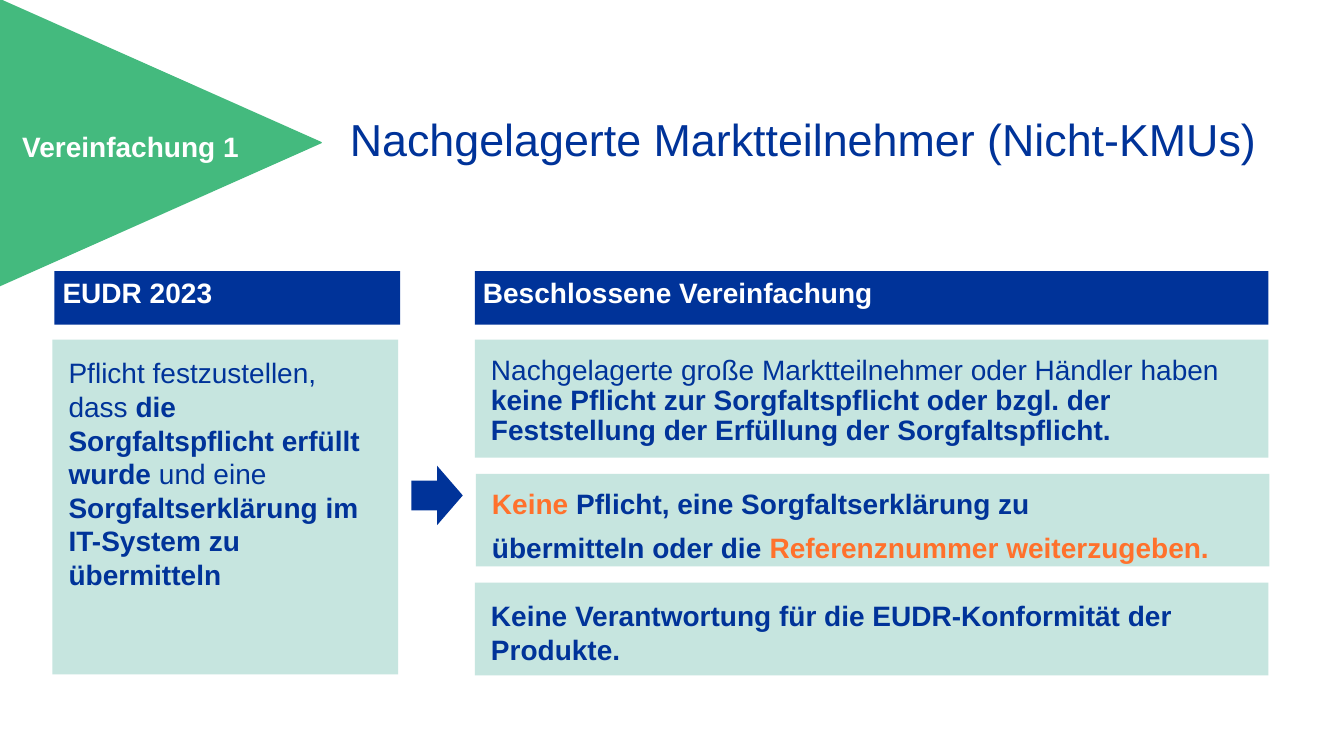
from dataclasses import dataclass
from lxml.etree import SubElement
from pptx import Presentation
from pptx.dml.color import RGBColor
from pptx.enum.shapes import MSO_SHAPE as Kind
from pptx.enum.text import MSO_ANCHOR as Anchor, MSO_AUTO_SIZE as Fit, PP_ALIGN as Align
from pptx.oxml.ns import qn
from pptx.util import Emu, Pt

PX = 9144  # 100 px to the inch
HUES = {"blue": "003399", "mint": "C6E5DF", "green": "44BA7E",
        "orange": "FF712C", "white": "FFFFFF"}


@dataclass(frozen=True)
class Run:
    text: str
    hue: str = "blue"
    bold: bool = False


@dataclass(frozen=True)
class Card:
    box: tuple[int, int, int, int]
    fill: str
    pad: int
    lines: list[list[Run]]
    pitch: float = 0.9
    slot: int | None = None  # body placeholder index


def emu(px: int) -> Emu:
    return Emu(px * PX)


def color(name: str) -> RGBColor:
    return RGBColor.from_string(HUES[name])


def place(shape, box: tuple[int, int, int, int]) -> None:
    shape.left, shape.top, shape.width, shape.height = map(emu, box)


def paint(shape, fill: str) -> None:
    shape.fill.solid()
    shape.fill.fore_color.rgb = color(fill)
    shape.line.fill.background()


def write(shape, lines: list[list[Run]], *, size: int = 20, pad: int | None = None,
          pitch: float = 1.0, align=Align.LEFT, anchor=Anchor.TOP) -> None:
    frame = shape.text_frame
    frame.word_wrap, frame.auto_size = True, Fit.NONE
    frame.vertical_anchor = anchor
    if pad is not None:
        frame.margin_left = frame.margin_right = emu(pad)
        frame.margin_top = frame.margin_bottom = emu(pad)
    for i, runs in enumerate(lines):
        para = frame.add_paragraph() if i else frame.paragraphs[0]
        props = para._p.get_or_add_pPr()
        props.set("marL", "0")
        props.set("indent", "0")
        SubElement(props, qn("a:buNone"))
        para.alignment, para.line_spacing = align, pitch
        para.space_before = Pt(10 if i else 0)
        for item in runs:
            run = para.add_run()
            run.text = item.text
            font = run.font
            font.name, font.size, font.bold = "Arial", Pt(size), item.bold
            font.color.rgb = color(item.hue)


def add_shape(slide, kind, box: tuple[int, int, int, int], fill: str):
    shape = slide.shapes.add_shape(kind, *map(emu, box))
    shape.shadow.inherit = False
    paint(shape, fill)
    return shape


def add_card(slide, card: Card) -> None:
    if card.slot is None:
        shape = add_shape(slide, Kind.RECTANGLE, card.box, card.fill)
    else:
        shape = slide.placeholders[card.slot]
        place(shape, card.box)
        paint(shape, card.fill)
    write(shape, card.lines, pad=card.pad, pitch=card.pitch)


CARDS = [
    Card((54, 269, 343, 53), "blue", 8, [[Run("EUDR 2023", "white", True)]], slot=1),
    Card((52, 337, 343, 332), "mint", 16, [[
        Run("Pflicht festzustellen, dass"),
        Run(" die Sorgfaltspflicht erfüllt wurde", bold=True),
        Run(" und eine "),
        Run("Sorgfaltserklärung im IT-System zu übermitteln", bold=True),
    ]], pitch=1.0, slot=2),
    Card((471, 269, 787, 53), "blue", 8,
         [[Run("Beschlossene Vereinfachung", "white", True)]], slot=3),
    Card((471, 337, 787, 117), "mint", 16, [[
        Run("Nachgelagerte große Marktteilnehmer oder Händler haben "),
        Run("keine Pflicht zur Sorgfaltspflicht oder bzgl. der Feststellung "
            "der Erfüllung der Sorgfaltspflicht.", bold=True),
    ]], slot=4),
    Card((472, 470, 787, 92), "mint", 16, [
        [Run("Keine ", "orange", True),
         Run("Pflicht, eine Sorgfaltserklärung zu", bold=True)],
        [Run("übermitteln oder die ", bold=True),
         Run("Referenznummer weiterzugeben.", "orange", True)],
    ]),
    Card((471, 578, 787, 92), "mint", 16, [[
        Run("Keine Verantwortung für die EUDR-Konformität der Produkte.", bold=True),
    ]], pitch=1.0),
]


def main() -> None:
    deck = Presentation()
    deck.slide_width, deck.slide_height = emu(1333), emu(750)
    slide = deck.slides.add_slide(deck.slide_layouts.get_by_name("Comparison"))

    title = slide.shapes.title
    place(title, (222, 96, 1150, 89))
    write(title, [[Run("Nachgelagerte Marktteilnehmer (Nicht-KMUs)")]],
          size=32, pitch=0.9, align=Align.CENTER, anchor=Anchor.MIDDLE)

    for card in CARDS:
        add_card(slide, card)

    add_shape(slide, Kind.RIGHT_ARROW, (408, 462, 51, 59), "blue")
    flag = add_shape(slide, Kind.ISOSCELES_TRIANGLE, (17, -18, 284, 319), "green")
    flag.rotation = 90
    flag.line.color.rgb = color("green")
    flag.line.width = Pt(1)

    label = slide.shapes.add_textbox(*map(emu, (-239, 124, 737, 77)))
    write(label, [[Run("Vereinfachung 1", "white", True)]], align=Align.CENTER)

    deck.save("out.pptx")


if __name__ == "__main__":
    main()
